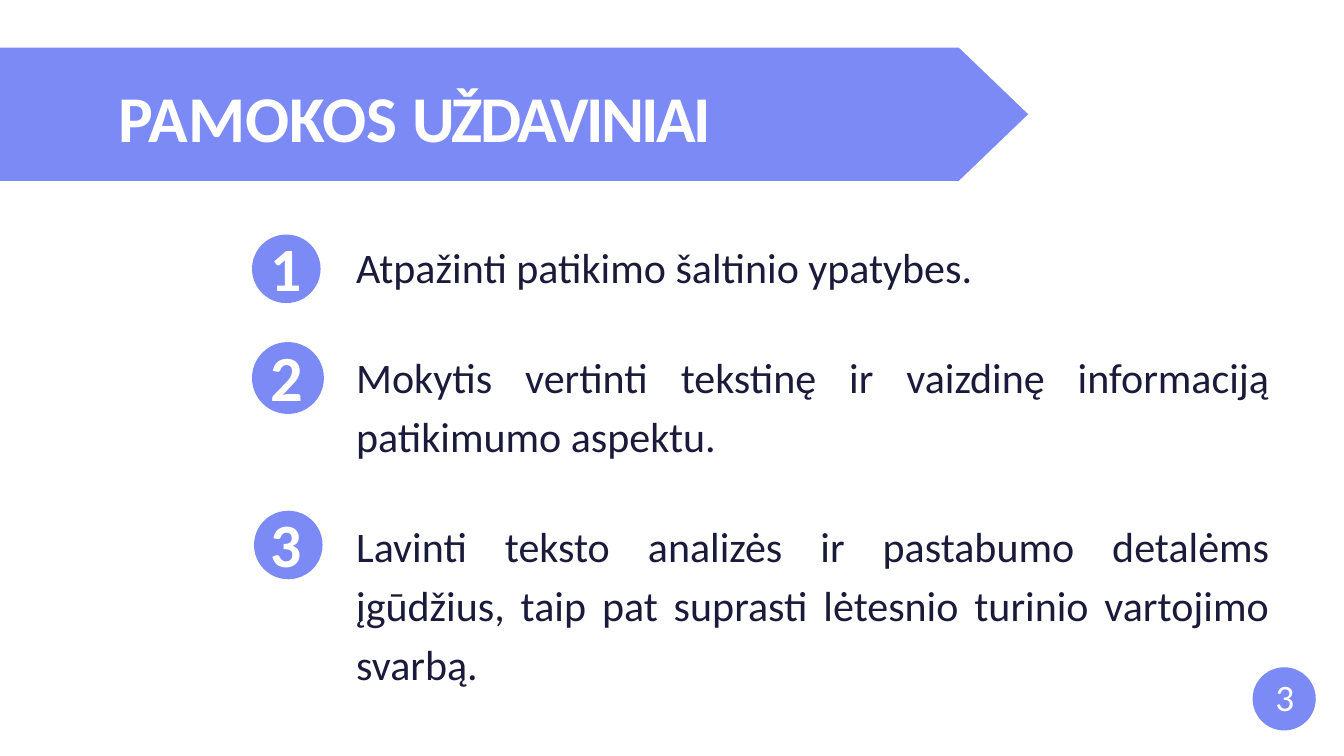
from dataclasses import dataclass

from pptx import Presentation
from pptx.dml.color import RGBColor
from pptx.enum.shapes import MSO_SHAPE as Shape
from pptx.enum.text import MSO_ANCHOR as Anchor, PP_ALIGN as Align
from pptx.util import Inches, Pt

WIDTH, HEIGHT = 20, 11.25


@dataclass(frozen=True)
class Theme:
    accent: RGBColor = RGBColor(0x7B, 0x8A, 0xF5)
    ink: RGBColor = RGBColor(0x1A, 0x1A, 0x3A)
    white: RGBColor = RGBColor(0xFF, 0xFF, 0xFF)
    font: str = "Calibri"
    title: int = 70
    body: int = 45
    page_number: int = 40
    badge_ratio: float = 64.5  # points of numeral per inch of circle


THEME = Theme()

# Text column shared by all the tasks
TEXT_LEFT = 5.3
TEXT_WIDTH = 13.59
NUMERAL_LEFT = 4.03

# number, circle left, circle top, diameter, text top, text height, line spacing, task
TASKS = [
    ("1", 3.75, 3.49, 1.02, 3.58, 0.78, 1,
     "Atpažinti patikimo šaltinio ypatybes."),
    ("2", 3.75, 5.09, 1.07, 5.1, 1.69, 1.17,
     "Mokytis vertinti tekstinę ir vaizdinę informaciją patikimumo aspektu."),
    ("3", 3.78, 7.6, 1.02, 7.61, 2.65, 1.17,
     "Lavinti teksto analizės ir pastabumo detalėms įgūdžius, taip pat "
     "suprasti lėtesnio turinio vartojimo svarbą."),
]


def paint(shape):
    shape.shadow.inherit = False
    shape.fill.solid()
    shape.fill.fore_color.rgb = THEME.accent
    shape.line.fill.background()


def add_text(page, left, top, width, height, *parts, size, color=THEME.white,
             bold=False, align=Align.LEFT, line_spacing=1):
    """Add one paragraph; each part is a (text, letter spacing in points) pair."""
    box = page.shapes.add_textbox(*map(Inches, (left, top, width, height)))
    frame = box.text_frame
    frame.word_wrap = True
    frame.vertical_anchor = Anchor.TOP
    frame.margin_left = frame.margin_right = frame.margin_bottom = 0
    frame.margin_top = Inches(0.01)
    para = frame.paragraphs[0]
    para.alignment = align
    para.line_spacing = line_spacing
    for text, spacing in parts:
        span = para.add_run()
        span.text = text
        span.font.name = THEME.font
        span.font.size = Pt(size)
        span.font.bold = bold
        span.font.color.rgb = color
        if spacing:
            span.font._element.set("spc", str(round(spacing * 100)))


def add_circle(page, left, top, diameter):
    paint(page.shapes.add_shape(
        Shape.OVAL, *map(Inches, (left, top, diameter, diameter))))


def add_banner(page):
    left, top, shoulder, tip, bottom = 0, 0.71, 14.27, 15.3, 2.69
    outline = page.shapes.build_freeform(left, Inches(top))
    corners = [(shoulder, top), (tip, (top + bottom) / 2),
               (shoulder, bottom), (left, bottom)]
    outline.add_line_segments([(Inches(x), Inches(y)) for x, y in corners])
    paint(outline.convert_to_shape())
    add_text(page, 1.76, 1.14, 11.25, 1.19, ("PAMOKOS ", 0),
             ("UŽDAVINIAI", -2.9), size=THEME.title, bold=True)


def add_task(page, number, left, top, diameter, text_top, text_height,
             line_spacing, task):
    add_circle(page, left, top, diameter)
    add_text(page, NUMERAL_LEFT, top - 0.08, 0.58, 1.13, (number, 0),
             size=round(THEME.badge_ratio * diameter), bold=True)
    add_text(page, TEXT_LEFT, text_top, TEXT_WIDTH, text_height, (task, 0),
             size=THEME.body, color=THEME.ink, align=Align.JUSTIFY,
             line_spacing=line_spacing)


def add_page_number(page, number):
    add_circle(page, 18.64, 9.93, 0.94)
    add_text(page, 18.98, 10.02, 0.47, 0.68, (number, 0),
             size=THEME.page_number)


def main():
    deck = Presentation()
    deck.slide_width, deck.slide_height = Inches(WIDTH), Inches(HEIGHT)
    page = deck.slides.add_slide(deck.slide_layouts[6])
    add_banner(page)
    for task in TASKS:
        add_task(page, *task)
    add_page_number(page, "3")
    deck.save("out.pptx")


if __name__ == "__main__":
    main()
